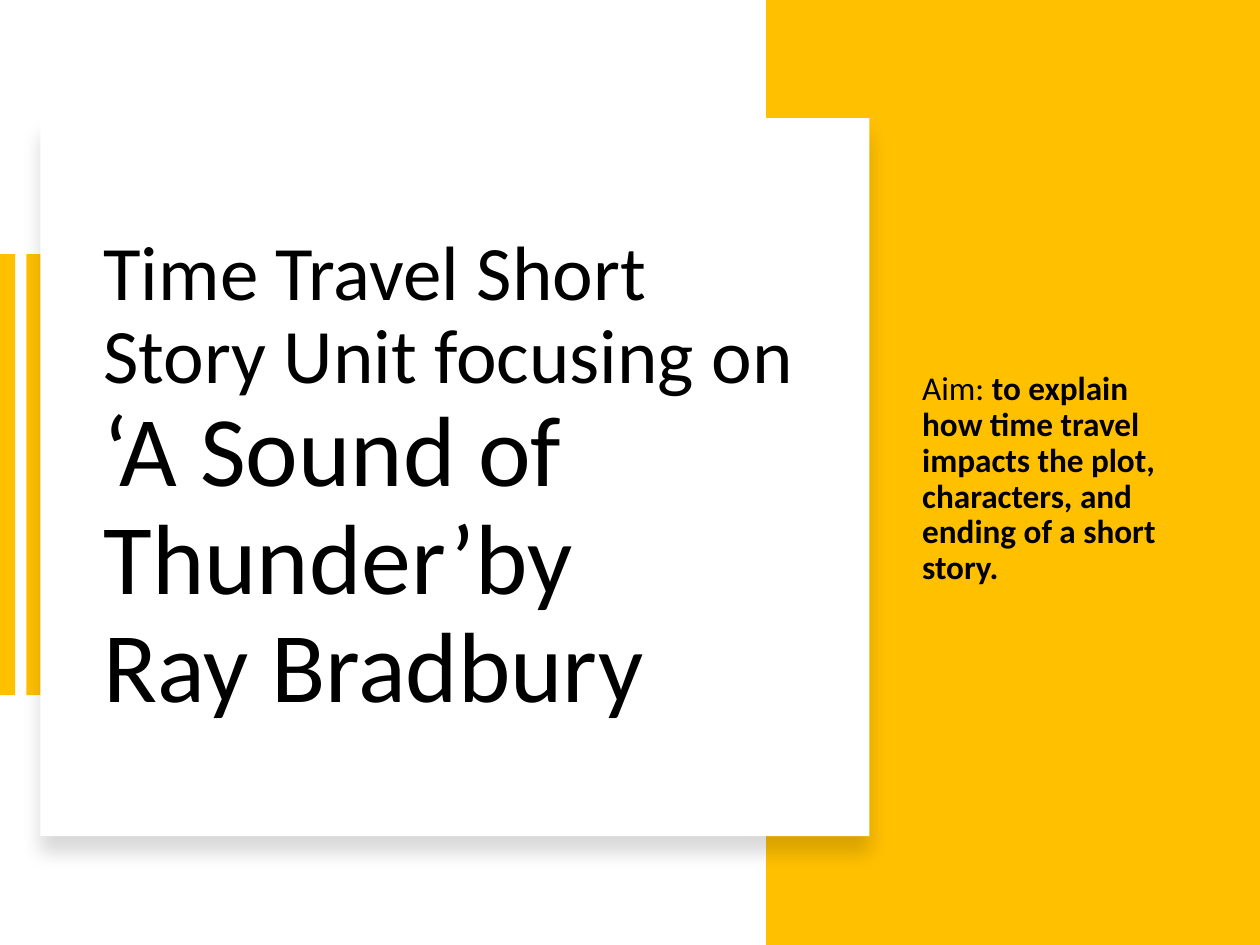
import pptx
import pptx.dml.color
import pptx.enum.shapes
import pptx.enum.text
import pptx.oxml
import pptx.oxml.ns
import pptx.util

GOLD = pptx.dml.color.RGBColor(0xFF, 0xC0, 0x00)
WHITE = pptx.dml.color.RGBColor(0xFF, 0xFF, 0xFF)
BLACK = pptx.dml.color.RGBColor(0x00, 0x00, 0x00)
FONT = "Calibri"
WIDTH, HEIGHT = 10, 7.5
NO_BREAK_SPACE = chr(160)


def percent_of(box, left, top, width, height):
    box_left, box_top, box_width, box_height = box
    return (box_left + left * box_width / 100, box_top + top * box_height / 100,
            width * box_width / 100, height * box_height / 100)


def lengths(box):
    return [pptx.util.Inches(length) for length in box]


def add_rectangle(slide, box, color):
    shape = slide.shapes.add_shape(
        pptx.enum.shapes.MSO_SHAPE.RECTANGLE, *lengths(box))
    shape.shadow.inherit = False
    shape.fill.solid()
    shape.fill.fore_color.rgb = color
    shape.line.fill.background()
    return shape


def add_soft_shadow(shape, blur, distance, opacity):
    effects = shape.element.spPr.find(pptx.oxml.ns.qn("a:effectLst"))
    effects.append(pptx.oxml.parse_xml(
        f'<a:outerShdw {pptx.oxml.ns.nsdecls("a")} blurRad="{pptx.util.Pt(blur)}" '
        f'dist="{pptx.util.Pt(distance)}" dir="5400000" algn="t" rotWithShape="0">'
        f'<a:srgbClr val="{BLACK}"><a:alpha val="{opacity * 1000}"/></a:srgbClr>'
        '</a:outerShdw>'))


def add_text(paragraph, text, size, bold=False, color=BLACK):
    for index, line in enumerate(text.split("\n")):
        if index:
            paragraph.add_line_break()
        if line:
            run = paragraph.add_run()
            run.text = line
            run.font.name = FONT
            run.font.size = pptx.util.Pt(size)
            run.font.bold = bold
            run.font.color.rgb = color


def prepare_paragraph(shape, space_before=0):
    frame = shape.text_frame
    frame.word_wrap = True
    frame.auto_size = pptx.enum.text.MSO_AUTO_SIZE.NONE
    frame.vertical_anchor = pptx.enum.text.MSO_ANCHOR.MIDDLE
    paragraph = frame.paragraphs[0]
    paragraph.alignment = pptx.enum.text.PP_ALIGN.LEFT
    paragraph.line_spacing = 0.9
    paragraph.space_before = pptx.util.Pt(space_before)
    return paragraph


def place_stripes(slide, box):
    stripe_width = 36.36
    for left in (0, 100 - stripe_width):
        add_rectangle(slide, percent_of(box, left, 0, stripe_width, 100), GOLD)


def place_title_card(slide, box):
    card = add_rectangle(slide, box, WHITE)
    add_soft_shadow(card, blur=11, distance=10, opacity=15)
    title = slide.shapes.title
    slide.shapes.element.append(title.element)
    title.left, title.top, title.width, title.height = lengths(
        percent_of(box, 6.1, 11.75, 88.6, 77))
    paragraph = prepare_paragraph(title)
    add_text(paragraph, "Time Travel Short Story Unit focusing on \n", size=44)
    add_text(paragraph, "‘A Sound of Thunder’by\nRay Bradbury", size=57)


def place_aim(slide, box):
    aim = slide.shapes.add_textbox(
        *lengths(percent_of(box, 29.1, 26.93, 62.76, 47.6)))
    paragraph = prepare_paragraph(aim, space_before=7.5)
    add_text(paragraph, "Aim: ", size=19)
    add_text(paragraph, f"to explain how{NO_BREAK_SPACE}time travel impacts the plot, "
             "characters, and ending of a short story.", size=19, bold=True)


def main():
    presentation = pptx.Presentation()
    presentation.slide_width = pptx.util.Inches(WIDTH)
    presentation.slide_height = pptx.util.Inches(HEIGHT)
    slide = presentation.slides.add_slide(presentation.slide_layouts[5])
    page = (0, 0, WIDTH, HEIGHT)
    side_panel = percent_of(page, 60.8, 0, 39.2, 100)
    place_stripes(slide, percent_of(page, 0, 26.9, 3.3, 46.67))
    add_rectangle(slide, side_panel, GOLD)
    place_title_card(slide, percent_of(page, 3.2, 12.5, 65.8, 76))
    place_aim(slide, side_panel)
    presentation.save("out.pptx")


if __name__ == "__main__":
    main()
